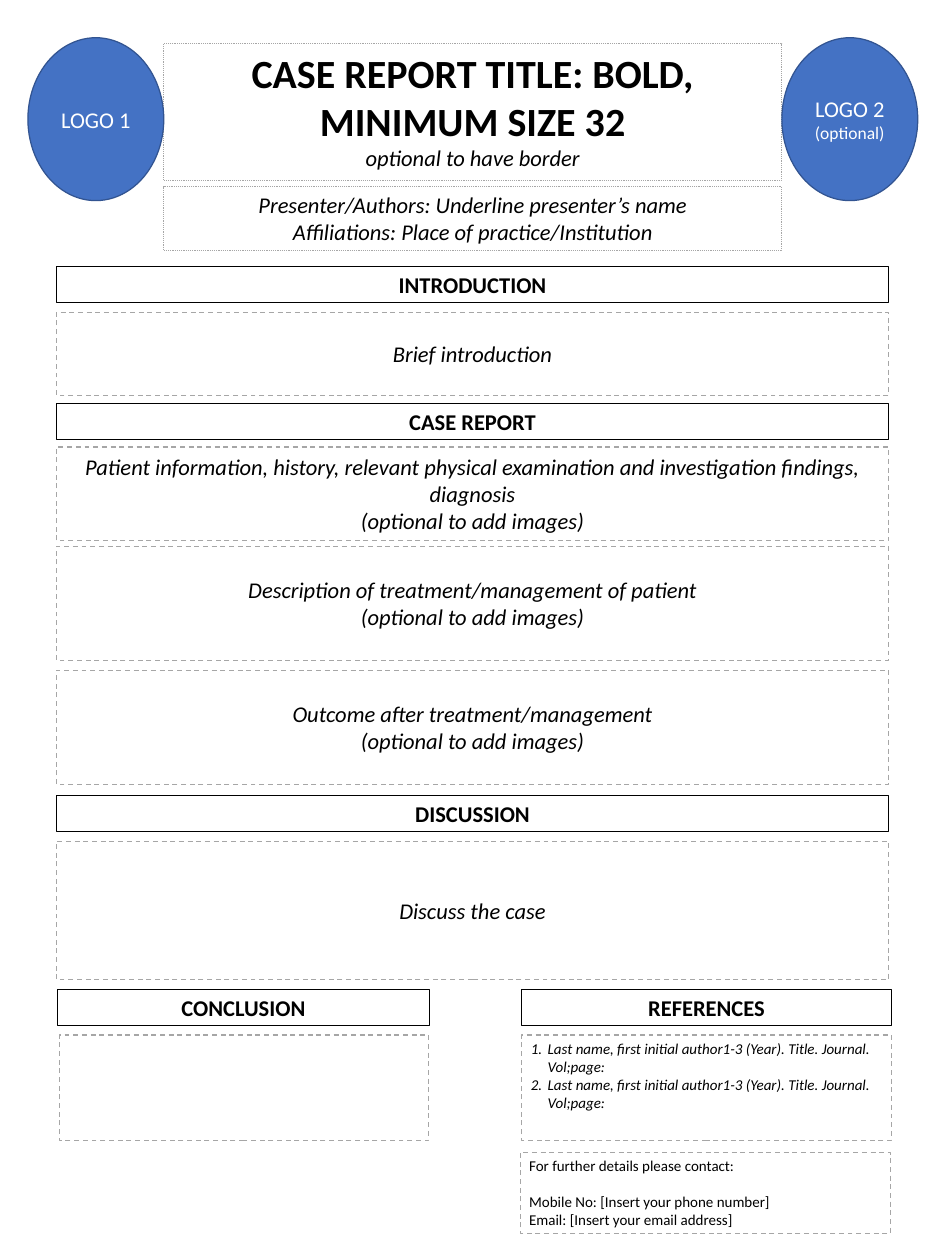
from pptx import Presentation
from pptx.dml.color import RGBColor
from pptx.enum.dml import MSO_LINE as Dash
from pptx.enum.shapes import MSO_SHAPE as Shape
from pptx.enum.text import MSO_ANCHOR as Anchor, MSO_AUTO_SIZE as Fit, PP_ALIGN as Align
from pptx.oxml.xmlchemy import OxmlElement
from pptx.util import Pt

FONT = "Calibri"
BLACK, WHITE, GREY, BLUE, NAVY = "000000", "FFFFFF", "A6A6A6", "4472C4", "325491"
LEFT, WIDTH, HEADING_HEIGHT = 45, 666, 28.8
RIGHT_LEFT, COLUMN_WIDTH = 417.5, 295.5
BANNER_LEFT, BANNER_WIDTH = 131, 494.5
LOGO_TOP, LOGO_WIDTH, LOGO_HEIGHT = 30.2, 108.7, 130.3

IMAGES = "(optional to add images)"
REFERENCE = "Last name, first initial author1-3 (Year). Title. Journal. Vol;page:"

TITLE = [[("CASE REPORT TITLE: BOLD, MINIMUM SIZE 32", 32, "b")],
         [("optional to have border", 18, "i")]]
AUTHORS = ["Presenter/Authors: Underline presenter’s name",
           "Affiliations: Place of practice/Institution"]
LOGOS = [
    (22.3, [("LOGO 1", 18, "")]),
    (BANNER_LEFT + BANNER_WIDTH, [("LOGO 2 ", 18, ""), ("(optional)", 14, "")]),
]
HEADINGS = [
    ("INTRODUCTION", LEFT, 213.1, WIDTH),
    ("CASE REPORT", LEFT, 322.7, WIDTH),
    ("DISCUSSION", LEFT, 636.5, WIDTH),
    ("CONCLUSION", LEFT + 0.7, 791.5, 298),
    ("REFERENCES", RIGHT_LEFT, 791.5, COLUMN_WIDTH),
]
SECTIONS = [
    (249.9, 66.4, ["Brief introduction"]),
    (357.7, 75, ["Patient information, history, relevant physical examination "
                 "and investigation findings, diagnosis", IMAGES]),
    (437, 91.3, ["Description of treatment/management of patient", IMAGES]),
    (536.3, 91.3, ["Outcome after treatment/management", IMAGES]),
    (673.2, 110.6, ["Discuss the case"]),
]
REFERENCES = [REFERENCE, REFERENCE]
CONTACT = ["For further details please contact:",
           "Mobile No: [Insert your phone number]",
           "Email: [Insert your email address]"]
NOTES_TOP, NOTES_HEIGHT = 828, 84.3


def color(value):
    return RGBColor.from_string(value)


def lines(texts, size, style):
    return [[(text, size, style)] for text in texts]


def place(box, left, top, width, height):
    box.left, box.top, box.width, box.height = map(Pt, (left, top, width, height))


def outline(box, value, width, dash=None):
    box.line.color.rgb = color(value)
    box.line.width = Pt(width)
    if dash is not None:
        box.line.dash_style = dash


def write(box, paras, align=Align.CENTER, anchor=Anchor.TOP, ink=BLACK):
    frame = box.text_frame
    frame.word_wrap = True
    frame.auto_size = Fit.NONE
    frame.vertical_anchor = anchor
    for index, spans in enumerate(paras):
        para = frame.add_paragraph() if index else frame.paragraphs[0]
        para.alignment = align
        para.space_before = Pt(0)
        for text, size, style in spans:
            span = para.add_run()
            span.text = text
            span.font.name = FONT
            span.font.size = Pt(size)
            span.font.bold = "b" in style
            span.font.italic = "i" in style
            span.font.color.rgb = color(ink)


def add_box(page, bounds, kind=Shape.RECTANGLE, fill=None):
    box = page.shapes.add_shape(kind, *map(Pt, bounds))
    box.shadow.inherit = False
    if fill:
        box.fill.solid()
        box.fill.fore_color.rgb = color(fill)
    else:
        box.fill.background()
    return box


def add_dashed(page, *bounds):
    box = add_box(page, bounds)
    outline(box, GREY, 1, Dash.DASH)
    return box


def number(para):
    properties = para._p.get_or_add_pPr()
    properties.set("marL", str(Pt(13.5)))
    properties.set("indent", str(-Pt(13.5)))
    bullet = OxmlElement("a:buAutoNum")
    bullet.set("type", "arabicPeriod")
    properties.append(bullet)


def main():
    deck = Presentation()
    deck.slide_width, deck.slide_height = Pt(756), Pt(1008)
    page = deck.slides.add_slide(deck.slide_layouts[1])

    title = page.shapes.title
    place(title, BANNER_LEFT, 35, BANNER_WIDTH, 109)
    outline(title, GREY, 0.75, Dash.ROUND_DOT)
    write(title, TITLE)

    authors = add_box(page, (BANNER_LEFT, 149.5, BANNER_WIDTH, 50.9))
    outline(authors, GREY, 0.75, Dash.ROUND_DOT)
    write(authors, lines(AUTHORS, 18, "i"))

    for left, spans in LOGOS:
        logo = add_box(page, (left, LOGO_TOP, LOGO_WIDTH, LOGO_HEIGHT), Shape.OVAL, BLUE)
        outline(logo, NAVY, 1)
        write(logo, [spans], anchor=Anchor.MIDDLE, ink=WHITE)

    for text, left, top, width in HEADINGS:
        heading = add_box(page, (left, top, width, HEADING_HEIGHT))
        outline(heading, BLACK, 0.75)
        write(heading, lines([text], 18, "b"))

    for top, height, texts in SECTIONS:
        section = add_dashed(page, LEFT, top, WIDTH, height)
        write(section, lines(texts, 18, "i"), anchor=Anchor.MIDDLE)

    add_dashed(page, 47.5, NOTES_TOP, COLUMN_WIDTH, NOTES_HEIGHT)

    references = page.placeholders[1]
    place(references, RIGHT_LEFT, NOTES_TOP, COLUMN_WIDTH, NOTES_HEIGHT)
    outline(references, GREY, 1, Dash.DASH)
    write(references, lines(REFERENCES, 12, "i"), Align.LEFT)
    for para in references.text_frame.paragraphs:
        number(para)

    contact = add_dashed(page, 416.2, 921.8, 296.2, 64.8)
    write(contact, lines(CONTACT, 12, ""), Align.LEFT)
    contact.text_frame.paragraphs[1].space_before = Pt(14.6)

    deck.save("out.pptx")


if __name__ == "__main__":
    main()
